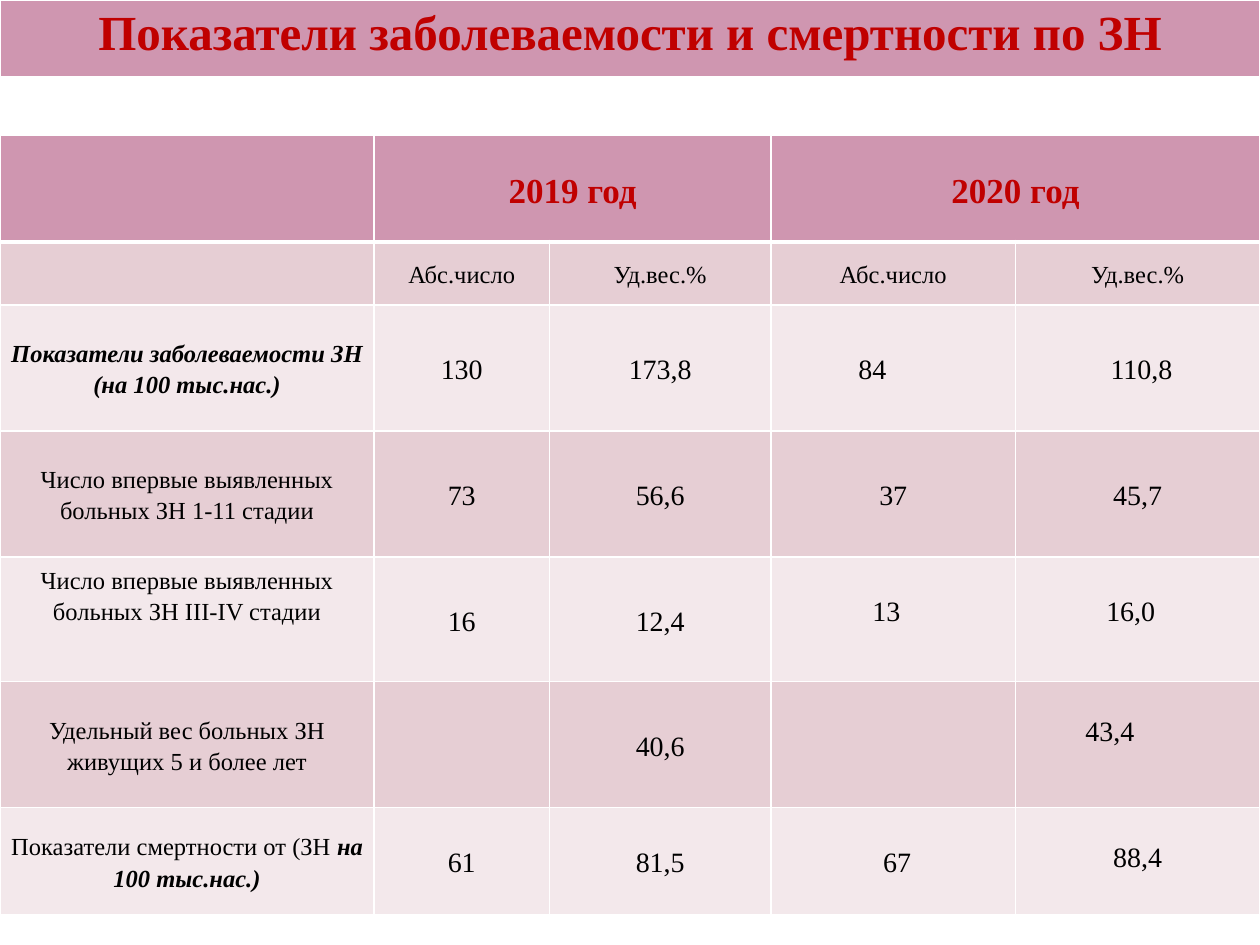
"""Build a slide with a title band and a table of incidence and mortality rates."""
from lxml import etree
from pptx import Presentation
from pptx.dml import color
from pptx.enum import text
from pptx.oxml import ns
from pptx.util import Inches, Pt

HUES = {"head": "CF96B0", "dark": "E6CED4", "light": "F3E8EB",
        "red": "C00000", "ink": "000000", "line": "FFFFFF"}
FONT = "Times New Roman"
COLS = [2.97, 1.39, 1.76, 1.94, 1.94]
ROWS = [0.85, 0.5, 1, 1, 0.99, 1, 0.85]
BODY = [
    ["", "Абс.число", "Уд.вес.%", "Абс.число", "Уд.вес.%"],
    ["Показатели заболеваемости ЗН (на 100 тыс.нас.)", "130", "173,8", "84", "110,8"],
    ["Число впервые выявленных больных ЗН 1-11 стадии", "73", "56,6", "37", "45,7"],
    ["Число впервые выявленных больных ЗН III-IV стадии", "16", "12,4", "13", "16,0"],
    ["Удельный вес больных ЗН живущих 5 и более лет", "", "40,6", "", "43,4"],
    ["Показатели смертности от (ЗН ", "61", "81,5", "67", "88,4"],
]
TAIL = "на 100 тыс.нас.)"
SHIFT = {(2, 3): -0.33, (2, 4): 0.06, (4, 3): -0.11, (4, 4): -0.11,
         (5, 4): -0.44, (6, 3): 0.06}
DROP = {(4, 0): 0.05, (4, 3): 0.28, (4, 4): 0.28, (5, 4): 0.24,
        (6, 3): 0.28, (6, 4): 0.24}


def add_grid(slide, top, cols, rows):
    frame = slide.shapes.add_table(len(rows), len(cols), 0, Inches(top),
                                   Inches(sum(cols)), Inches(sum(rows)))
    grid = frame.table
    for col, width in zip(grid.columns, cols):
        col.width = Inches(width)
    for row, height in zip(grid.rows, rows):
        row.height = Inches(height)
    return grid


def add_edge(cell, side, width):
    props = cell._tc.get_or_add_tcPr()
    line = etree.SubElement(props, ns.qn("a:ln" + side), w=str(Pt(width)))
    fill = etree.SubElement(line, ns.qn("a:solidFill"))
    etree.SubElement(fill, ns.qn("a:srgbClr"), val=HUES["line"])


def paint(cell, hue, top=1, base=1):
    for side, width in zip("LRTB", (1, 1, top, base)):
        add_edge(cell, side, width)
    cell.fill.solid()
    cell.fill.fore_color.rgb = color.RGBColor.from_string(HUES[hue])


def add_run(para, words, size, hue="ink", bold=False, slant=False):
    run = para.add_run()
    run.text = words
    font = run.font
    font.name, font.size, font.bold, font.italic = FONT, Pt(size), bold, slant
    font.color.rgb = color.RGBColor.from_string(HUES[hue])


def place(cell, shift=0, drop=None):
    cell.margin_left = Inches(0.07 + max(shift, 0))
    cell.margin_right = Inches(0.07 + max(-shift, 0))
    cell.margin_top = Inches(drop or 0)
    cell.margin_bottom = 0
    anchor = text.MSO_ANCHOR
    cell.vertical_anchor = anchor.MIDDLE if drop is None else anchor.TOP
    para = cell.text_frame.paragraphs[0]
    para.alignment = text.PP_ALIGN.CENTER
    para.line_spacing = 1.15
    return para


def add_title(slide):
    cell = add_grid(slide, 0, [10], [0.62]).cell(0, 0)
    paint(cell, "head", base=3)
    para = cell.text_frame.paragraphs[0]
    para.alignment = text.PP_ALIGN.CENTER
    add_run(para, "Показатели заболеваемости и смертности по ЗН", 28, "red", True)


def add_head(grid):
    for col in range(len(COLS)):
        paint(grid.cell(0, col), "head", base=3)
    for col, year in ((1, "2019 год"), (3, "2020 год")):
        cell = grid.cell(0, col)
        cell.merge(grid.cell(0, col + 1))
        add_run(place(cell), year, 20, "red", True)


def add_body(grid):
    for row, line in enumerate(BODY, 1):
        for col, words in enumerate(line):
            cell, key = grid.cell(row, col), (row, col)
            paint(cell, "dark" if row % 2 else "light", top=3 if row == 1 else 1)
            para = place(cell, SHIFT.get(key, 0), DROP.get(key))
            if words:
                size = 14 if row == 1 or col == 0 else 16
                strong = key == (2, 0)
                add_run(para, words, size, bold=strong, slant=strong)
    add_run(grid.cell(len(BODY), 0).text_frame.paragraphs[0], TAIL, 14,
            bold=True, slant=True)


def main():
    deck = Presentation()
    deck.slide_width, deck.slide_height = Inches(10), Inches(7.5)
    slide = deck.slides.add_slide(deck.slide_layouts[6])
    grid = add_grid(slide, 1.07, COLS, ROWS)
    add_head(grid)
    add_body(grid)
    add_title(slide)
    deck.save("out.pptx")


if __name__ == "__main__":
    main()
